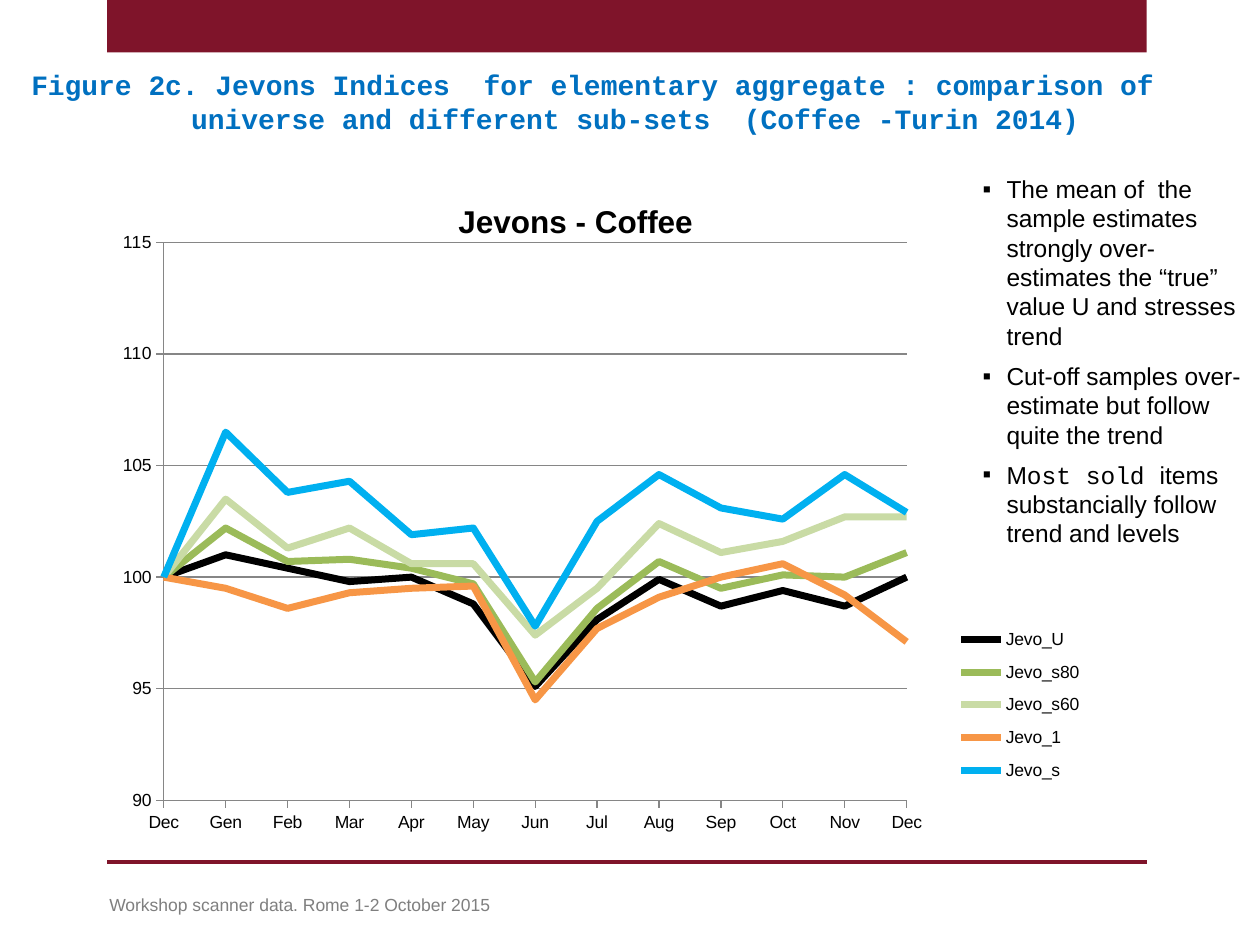
"""Build the slide comparing Jevons indices for coffee."""
from dataclasses import dataclass

from lxml.etree import SubElement
from pptx import Presentation
from pptx.chart.data import CategoryChartData
from pptx.dml.color import RGBColor
from pptx.enum.chart import XL_CHART_TYPE, XL_LEGEND_POSITION, XL_TICK_MARK
from pptx.enum.shapes import MSO_CONNECTOR, MSO_SHAPE
from pptx.enum.text import MSO_AUTO_SIZE
from pptx.oxml.ns import qn
from pptx.util import Pt

MAROON, BLACK, AXIS_GREY = "7F142A", "000000", "868686"
LEFT, RIGHT = 61.2, 655.2
MONTHS = ["Dec", "Gen", "Feb", "Mar", "Apr", "May", "Jun",
          "Jul", "Aug", "Sep", "Oct", "Nov", "Dec"]


@dataclass
class Run:
    text: str
    size: float
    font: str = "Arial"
    color: str = BLACK
    bold: bool = False


@dataclass
class TextBlock:
    left: float
    top: float
    width: float
    height: float
    paragraphs: list[list[Run]]
    indent: float = 0
    space_after: float = 0
    bullet: str = ""


@dataclass
class Index:
    name: str
    color: str
    values: list[float]


TEXT_BLOCKS = [
    TextBlock(10.8, 35.3, 686.9, 46, [[Run(
        "Figure 2c. Jevons Indices  for elementary aggregate : comparison of "
        "universe and different sub-sets  (Coffee -Turin 2014)",
        16, "Courier New", "0070C0", True)]], indent=91.4),
    TextBlock(554.4, 95.8, 165.6, 227.5, [
        [Run("The mean of  the sample estimates strongly over-estimates "
             "the “true” value U and stresses trend", 14)],
        [Run("Cut-off samples over-estimate but follow quite the trend", 14)],
        [Run("M", 14), Run("ost sold ", 14, "Courier New"),
         Run("items  substancially follow trend and levels", 14)],
    ], indent=13.7, space_after=6, bullet="▪"),
    TextBlock(55.4, 507.6, 481.7, 19.4, [[Run(
        "Workshop scanner data. Rome 1-2 October 2015", 10, color="7F7F7F")]]),
]

INDICES = [
    Index("Jevo_U", BLACK, [100, 101, 100.4, 99.8, 100, 98.8, 95.1,
                            98.1, 99.9, 98.7, 99.4, 98.7, 100]),
    Index("Jevo_s80", "9BBB59", [100, 102.2, 100.7, 100.8, 100.4, 99.7, 95.3,
                                 98.6, 100.7, 99.5, 100.1, 100, 101.1]),
    Index("Jevo_s60", "C9DBA5", [100, 103.5, 101.3, 102.2, 100.6, 100.6, 97.4,
                                 99.5, 102.4, 101.1, 101.6, 102.7, 102.7]),
    Index("Jevo_1", "F79646", [100, 99.5, 98.6, 99.3, 99.5, 99.6, 94.5,
                               97.7, 99.1, 100, 100.6, 99.2, 97.1]),
    Index("Jevo_s", "00B0F0", [100, 106.5, 103.8, 104.3, 101.9, 102.2, 97.8,
                               102.5, 104.6, 103.1, 102.6, 104.6, 102.9]),
]


def rgb(color: str) -> RGBColor:
    """Return the colour for a hex string."""
    return RGBColor.from_string(color)


def style_line(line, color: str, width: float) -> None:
    """Set the colour and width of a line."""
    line.color.rgb = rgb(color)
    line.width = Pt(width)


def style_font(font, size: float, name: str = "Arial",
               color: str = BLACK, bold: bool = False) -> None:
    """Set the size, typeface, colour and weight of a font."""
    font.size, font.name, font.bold = Pt(size), name, bold
    font.color.rgb = rgb(color)


def add_frame(slide) -> None:
    """Draw the top band and the footer rule."""
    band = slide.shapes.add_shape(
        MSO_SHAPE.RECTANGLE, Pt(LEFT), Pt(0), Pt(RIGHT - LEFT), Pt(30))
    band.shadow.inherit = False
    band.fill.solid()
    band.fill.fore_color.rgb = rgb(MAROON)
    band.line.fill.background()
    rule = slide.shapes.add_connector(
        MSO_CONNECTOR.STRAIGHT, Pt(LEFT), Pt(492.5), Pt(RIGHT), Pt(492.5))
    style_line(rule.line, MAROON, 2)
    SubElement(rule._element.spPr, qn("a:effectLst"))


def add_text(slide, block: TextBlock) -> None:
    """Draw a text box with hanging indents and optional bullets."""
    box = slide.shapes.add_textbox(
        Pt(block.left), Pt(block.top), Pt(block.width), Pt(block.height))
    frame = box.text_frame
    frame.word_wrap = True
    frame.auto_size = MSO_AUTO_SIZE.SHAPE_TO_FIT_TEXT
    for number, runs in enumerate(block.paragraphs):
        paragraph = frame.add_paragraph() if number else frame.paragraphs[0]
        properties = paragraph._p.get_or_add_pPr()
        properties.set("marL", str(Pt(block.indent)))
        properties.set("indent", str(-Pt(block.indent)))
        if block.bullet:
            SubElement(properties, qn("a:buFont"), typeface="Arial")
            SubElement(properties, qn("a:buChar"), char=block.bullet)
        paragraph.space_after = Pt(block.space_after)
        for item in runs:
            run = paragraph.add_run()
            run.text = item.text
            style_font(run.font, item.size, item.font, item.color, item.bold)


def place(element, position: int, **fractions: float) -> None:
    """Give a chart part a manual layout in fractions of the chart."""
    for old in element.findall(qn("c:layout")):
        element.remove(old)
    layout = element.makeelement(qn("c:layout"))
    element.insert(position, layout)
    manual = SubElement(layout, qn("c:manualLayout"))
    if element.tag == qn("c:plotArea"):
        SubElement(manual, qn("c:layoutTarget"), val="inner")
    for mode in ("xMode", "yMode"):
        SubElement(manual, qn(f"c:{mode}"), val="edge")
    for name, value in fractions.items():
        SubElement(manual, qn(f"c:{name}"), val=str(value))


def start_lines_on_axis(axis) -> None:
    """Make the value axis cross at the first category."""
    crossing = axis._element.makeelement(qn("c:crossBetween"), {"val": "midCat"})
    axis._element.find(qn("c:majorUnit")).addprevious(crossing)


def add_index_chart(slide, indices: list[Index]) -> None:
    """Draw the line chart of the indices."""
    data = CategoryChartData(number_format="0.0")
    data.categories = MONTHS
    for index in indices:
        data.add_series(index.name, index.values)
    chart = slide.shapes.add_chart(
        XL_CHART_TYPE.LINE, Pt(34.6), Pt(95.8), Pt(589.7), Pt(388.8), data).chart
    style_font(chart.font, 10)

    run = chart.chart_title.text_frame.paragraphs[0].add_run()
    run.text = "Jevons - Coffee"
    style_font(run.font, 18, bold=True)
    place(chart.chart_title._element, 1, x=0.38, y=0.04)

    chart.has_legend = True
    chart.legend.position = XL_LEGEND_POSITION.RIGHT
    chart.legend.include_in_layout = False
    place(chart.legend._element, 1, x=0.86, y=0.66, w=0.14, h=0.26)
    place(chart._chartSpace.chart.plotArea, 0, x=0.1, y=0.11, w=0.72, h=0.82)

    values = chart.value_axis
    values.minimum_scale, values.maximum_scale, values.major_unit = 90, 115, 5
    values.tick_labels.number_format = "0"
    values.tick_labels.number_format_is_linked = False
    values.has_major_gridlines = True
    style_line(values.major_gridlines.format.line, AXIS_GREY, 0.75)
    start_lines_on_axis(values)
    for axis in (values, chart.category_axis):
        axis.major_tick_mark = XL_TICK_MARK.OUTSIDE
        style_line(axis.format.line, AXIS_GREY, 0.75)

    chart.plots[0].vary_by_categories = False
    for series, index in zip(chart.plots[0].series, indices):
        series.smooth = False
        style_line(series.format.line, index.color, 4)


def main() -> None:
    """Build and save the presentation."""
    presentation = Presentation()
    presentation.slide_width, presentation.slide_height = Pt(720), Pt(540)
    slide = presentation.slides.add_slide(presentation.slide_layouts[6])
    add_frame(slide)
    for block in TEXT_BLOCKS:
        add_text(slide, block)
    add_index_chart(slide, INDICES)
    presentation.save("out.pptx")


if __name__ == "__main__":
    main()
